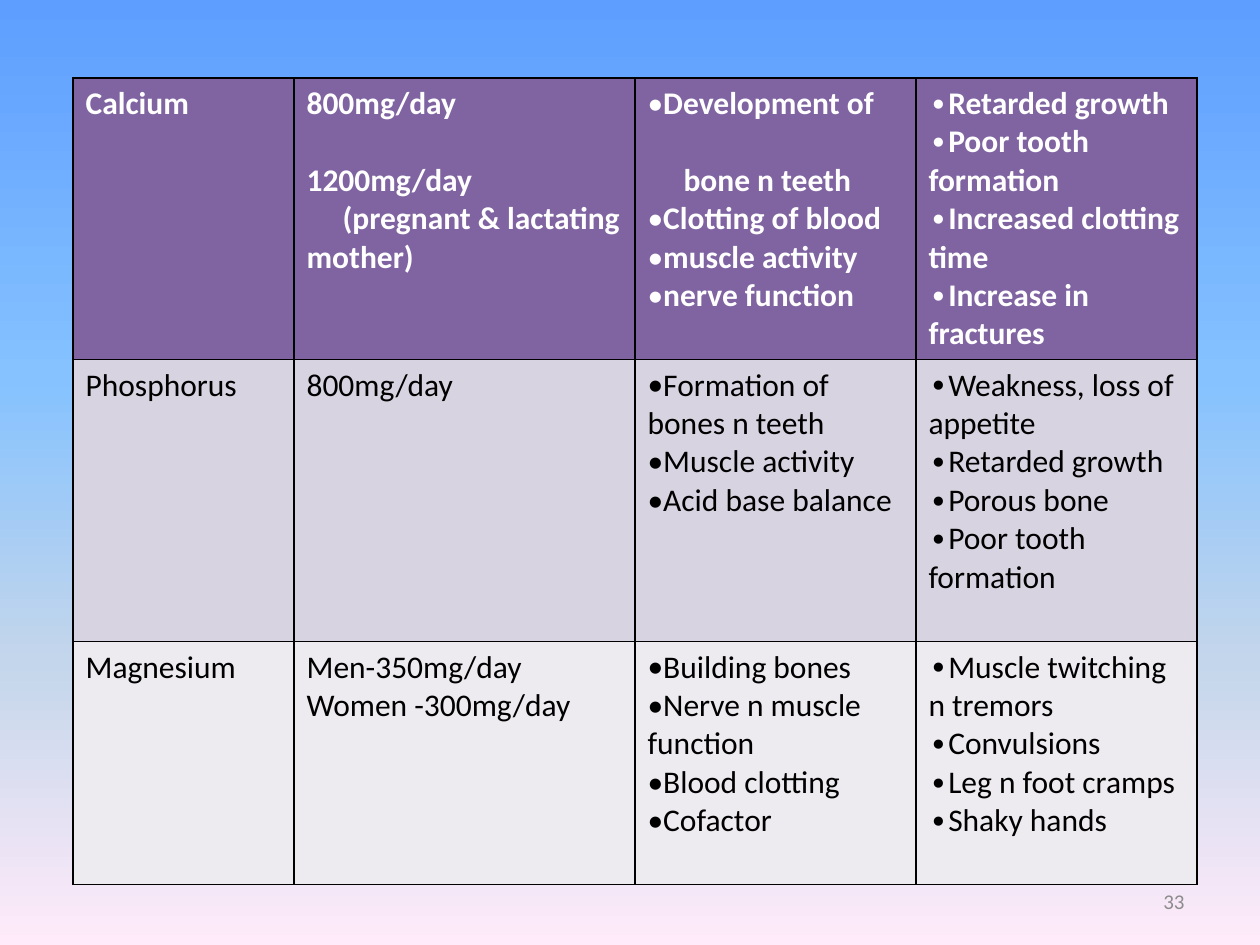
from lxml.etree import SubElement as Sub
from pptx import Presentation
from pptx.dml.color import RGBColor as RGB
from pptx.enum.text import MSO_ANCHOR as Anchor, PP_ALIGN as Align
from pptx.oxml.ns import qn
from pptx.util import Pt

SCALE = 914400 / 126
WHITE, BLACK, GREY = RGB(255, 255, 255), RGB(0, 0, 0), RGB(0x8C, 0x8C, 0x8C)
FILLS = [RGB(0x80, 0x64, 0xA2), RGB(0xD8, 0xD3, 0xE0), RGB(0xED, 0xEA, 0xF0)]
SKY = [(0, "5E9EFF"), (40, "85C2FF"), (70, "C4D6EB"), (100, "FFEBFA")]
COLS, ROWS = [221, 341, 281, 281], [281, 282, 243]
BULLETS = ["", "", "•", "∙"]
FACE = "Calibri"
LINE = Pt(22)


def px(n):
    return round(n * SCALE)


def write(frame, lines, size=18, color=BLACK, bold=False, align=Align.LEFT, bullet=""):
    frame.word_wrap = True
    for i, line in enumerate(lines):
        text, gap, indent = line if isinstance(line, tuple) else (line, 0, 0)
        para = frame.paragraphs[0] if i == 0 else frame.add_paragraph()
        para.alignment, para.space_before = align, gap
        props = para._p.get_or_add_pPr()
        props.set("marL", "0")
        props.set("indent", str(px(indent)))
        if bullet and not indent:
            Sub(props, qn("a:buFont"), typeface=FACE)
            Sub(props, qn("a:buChar"), char=bullet)
        run = para.add_run()
        run.text = text
        font = run.font
        font.name, font.size, font.bold = FACE, Pt(size), bold
        font.color.rgb = color


deck = Presentation()
deck.slide_width, deck.slide_height = px(1260), px(945)
slide = deck.slides.add_slide(deck.slide_layouts[6])

back = slide.background.fill
back.gradient()
back.gradient_angle = 270
stops = slide.element.find(".//" + qn("a:gsLst"))
for stop in list(stops):
    stops.remove(stop)
for pos, tint in SKY:
    stop = Sub(stops, qn("a:gs"), pos=str(pos * 1000))
    Sub(stop, qn("a:srgbClr"), val=tint)

data = [
    [
        ["Calcium"],
        ["800mg/day", ("1200mg/day", LINE, 0), ("(pregnant & lactating mother)", 0, 36)],
        ["Development of", ("bone n teeth", LINE, 36), "Clotting of blood",
         "muscle activity", "nerve function"],
        ["Retarded growth", "Poor tooth formation", "Increased clotting time",
         "Increase in fractures"],
    ],
    [
        ["Phosphorus"],
        ["800mg/day"],
        ["Formation of bones n teeth", "Muscle activity", "Acid base balance"],
        ["Weakness, loss of appetite", "Retarded growth", "Porous bone",
         "Poor tooth formation"],
    ],
    [
        ["Magnesium"],
        ["Men-350mg/day", "Women -300mg/day"],
        ["Building bones", "Nerve n muscle function", "Blood clotting", "Cofactor"],
        ["Muscle twitching n tremors", "Convulsions", "Leg n foot cramps", "Shaky hands"],
    ],
]

table = slide.shapes.add_table(
    3, 4, px(73), px(78), px(sum(COLS)), px(sum(ROWS))).table
for col, wide in zip(table.columns, COLS):
    col.width = px(wide)
for row, high in zip(table.rows, ROWS):
    row.height = px(high)

for r, row in enumerate(data):
    for c, lines in enumerate(row):
        cell = table.cell(r, c)
        write(cell.text_frame, lines, color=BLACK if r else WHITE,
              bold=r == 0, bullet=BULLETS[c])
        props = cell._tc.get_or_add_tcPr()
        for side in "LRTB":
            edge = Sub(props, qn("a:ln" + side), w=str(Pt(1)))
            Sub(Sub(edge, qn("a:solidFill")), qn("a:srgbClr"), val=str(BLACK))
        cell.fill.solid()
        cell.fill.fore_color.rgb = FILLS[r]

page = slide.shapes.add_textbox(px(903), px(876), px(294), px(50)).text_frame
page.vertical_anchor = Anchor.MIDDLE
write(page, ["33"], size=12, color=GREY, align=Align.RIGHT)

deck.save("out.pptx")
